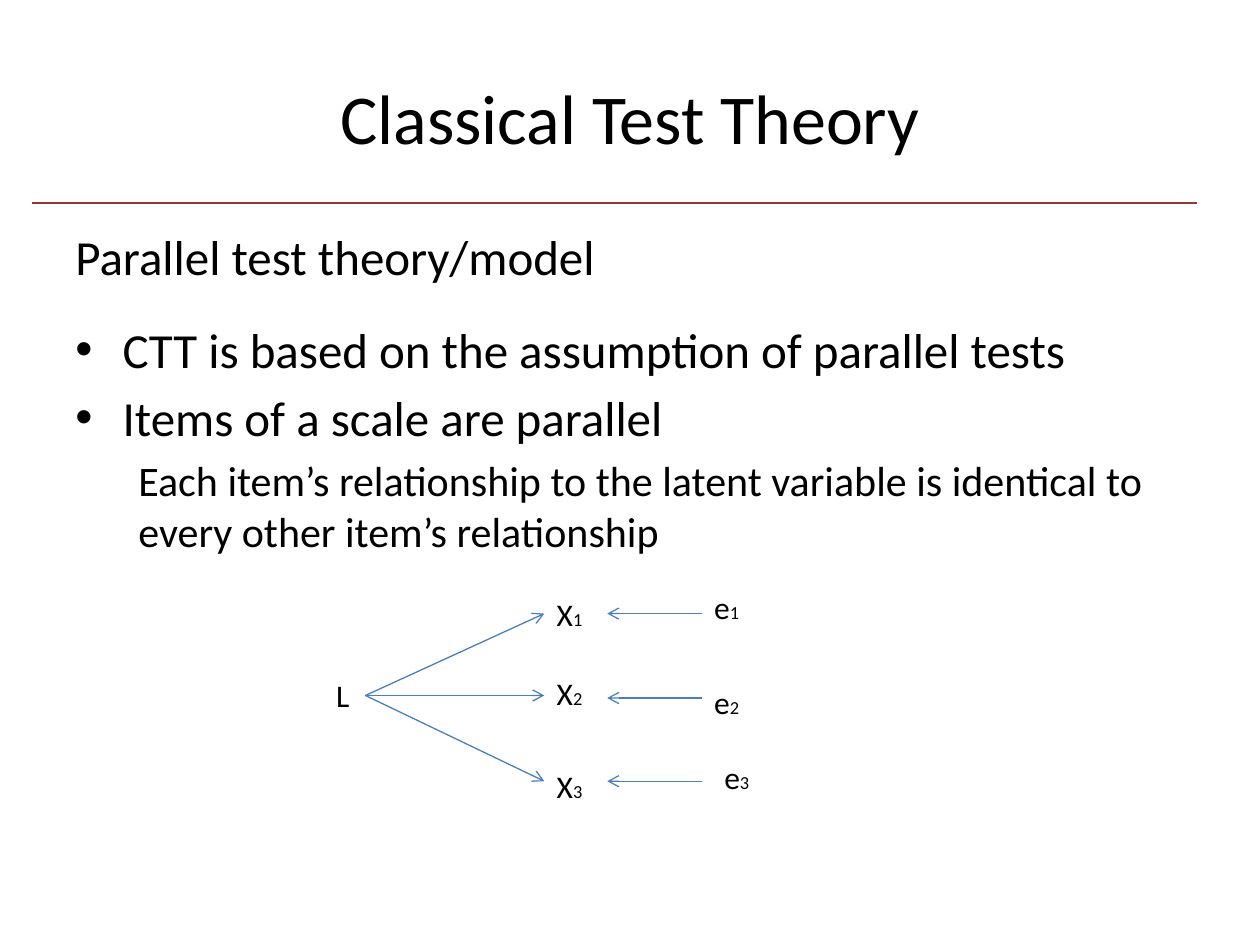
"""Build the Classical Test Theory slide with its parallel-test path diagram."""
from dataclasses import dataclass

from lxml import etree
from pptx import Presentation
from pptx import util as u
from pptx.dml.color import RGBColor
from pptx.enum import shapes, text
from pptx.oxml.ns import qn

COLS, ROWS = 100, 75
COLORS = {"ink": "000000", "rule": "953735", "arrow": "4B7EBC"}
FONT = "Calibri"

prs = Presentation()
prs.slide_width, prs.slide_height = u.Inches(10), u.Inches(7.5)
s = prs.slides.add_slide(prs.slide_layouts[6])


@dataclass(frozen=True)
class Para:
    runs: tuple
    before: float = 0
    indent: float = 0
    bullet: str = ""
    align: text.PP_ALIGN = text.PP_ALIGN.LEFT


@dataclass(frozen=True)
class Row:
    index: str
    x_top: float
    e_col: float
    e_top: float
    to_x: float
    from_e: float


def col(n: float) -> int:
    return round(prs.slide_width * n / COLS)


def row(n: float) -> int:
    return round(prs.slide_height * n / ROWS)


def add_text(x: float, y: float, w: float, h: float, paras: list, **fmt):
    sp = s.shapes.add_textbox(col(x), row(y), col(w), row(h))
    tf = sp.text_frame
    for name, value in {"word_wrap": True, **fmt}.items():
        setattr(tf, name, value)
    for i, para in enumerate(paras):
        p = tf.add_paragraph() if i else tf.paragraphs[0]
        pPr = p._p.get_or_add_pPr()
        pPr.set("marL", str(col(para.indent)))
        if para.bullet:
            pPr.set("indent", str(-col(para.indent)))
            etree.SubElement(pPr, qn("a:buFont"), typeface="Arial")
            etree.SubElement(pPr, qn("a:buChar"), char=para.bullet)
        p.alignment = para.align
        if para.before:
            p.space_before = u.Pt(para.before)
        for words, size in para.runs:
            r = p.add_run()
            r.text = words
            for name, value in {"name": FONT, "size": u.Pt(size)}.items():
                setattr(r.font, name, value)
            r.font.color.rgb = RGBColor.from_string(COLORS["ink"])
    return sp


def add_label(x: float, y: float, w: float, *runs: tuple):
    return add_text(x, y, w, 4, [Para(runs)], auto_size=text.MSO_AUTO_SIZE.SHAPE_TO_FIT_TEXT)


def add_line(x1: float, y1: float, x2: float, y2: float, color: str, width: float, arrow: bool = False):
    c = s.shapes.add_connector(shapes.MSO_CONNECTOR.STRAIGHT, col(x1), row(y1), col(x2), row(y2))
    c.line.color.rgb = RGBColor.from_string(COLORS[color])
    c.line.width = u.Pt(width)
    if arrow:
        etree.SubElement(c.line._get_or_add_ln(), qn("a:tailEnd"), type="arrow")
    etree.SubElement(c._element.spPr, qn("a:effectLst"))
    return c


def add_diagram(rows: list) -> None:
    latent = add_label(25.7, 53.2, 3.3, ("L", 18))
    for item in rows:
        x = add_label(43.2, item.x_top, 5, ("X", 18), (item.index, 10.5))
        add_label(item.e_col, item.e_top, 5, ("e", 18), (item.index, 10.5))
        path = add_line(29, 55.2, 43.2, item.to_x, "arrow", 0.75, True)
        error = add_line(55.7, item.from_e, 48.2, item.from_e, "arrow", 0.75, True)
        path.begin_connect(latent, 3)
        if item.x_top + 2 == item.to_x:
            path.end_connect(x, 1)
            error.end_connect(x, 3)


def main() -> None:
    add_line(2.5, 16.1, 95, 16.1, "rule", 1.5)
    add_text(5, 3, 90, 12.5, [Para((("Classical Test Theory", 40),), align=text.PP_ALIGN.CENTER)],
             vertical_anchor=text.MSO_ANCHOR.MIDDLE)
    add_text(5, 17.5, 93.3, 49.5, [
        Para((("Parallel test theory/model", 28),)),
        Para((("CTT is based on the assumption of parallel tests", 28),), 19.5, 3.75, "•"),
        Para((("Items of a scale are parallel", 28),), 5, 3.75, "•"),
        Para((("Each item’s relationship to the latent variable is identical to "
               "every other item’s relationship", 24),), 5, 5),
    ])
    add_diagram([
        Row("1", 46.7, 55.7, 46.2, 48.7, 48.7),
        Row("2", 53, 55.7, 53.7, 55.2, 55.4),
        Row("3", 60.4, 56.5, 59.7, 62, 62),
    ])
    prs.save("out.pptx")


if __name__ == "__main__":
    main()
